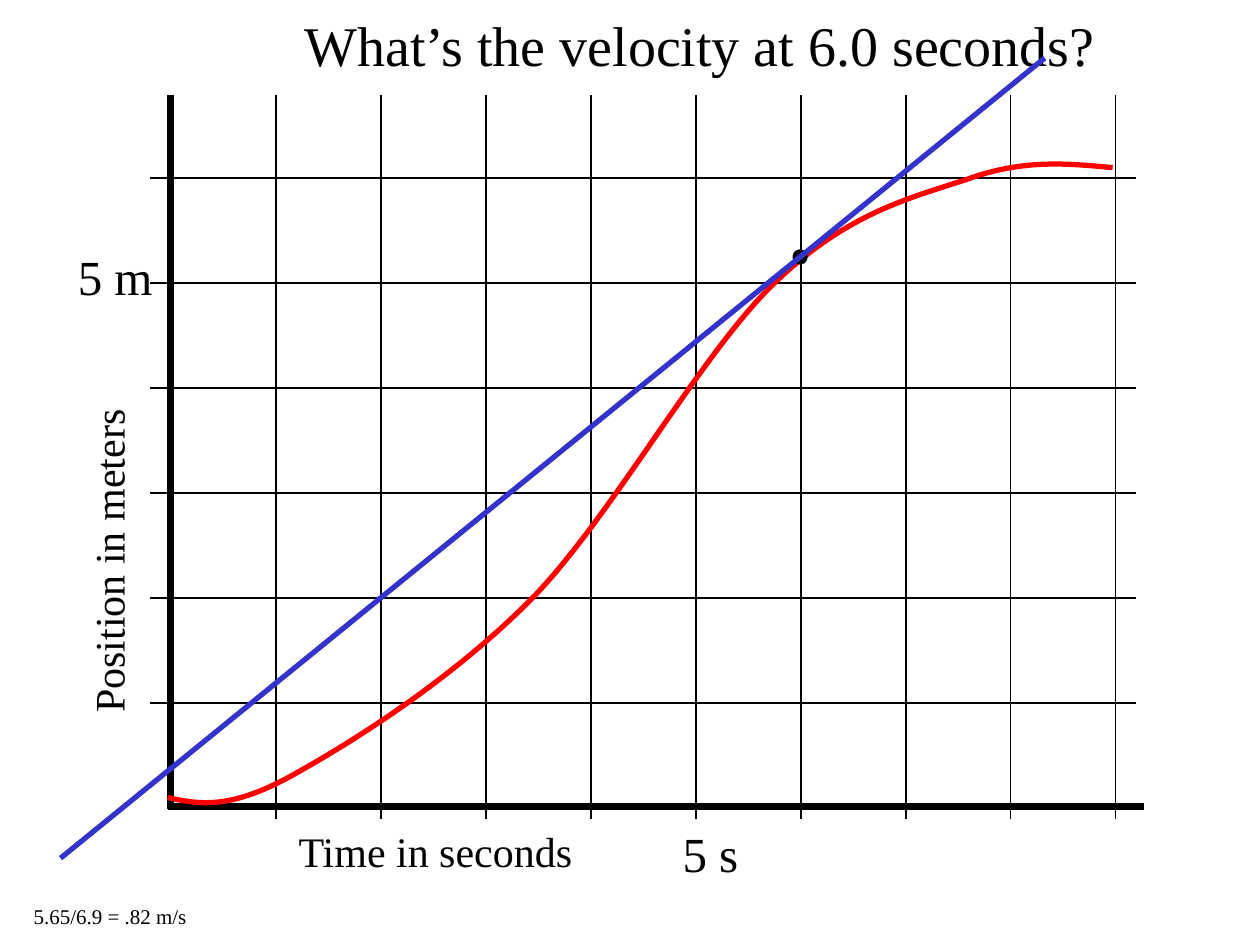
from pptx import Presentation
from pptx.dml.color import RGBColor as RGB
from pptx.enum.shapes import MSO_CONNECTOR as LINK, MSO_SHAPE as FORM
from pptx.enum.text import MSO_ANCHOR as ANCHOR, MSO_AUTO_SIZE as AUTO, PP_ALIGN as ALIGN
from pptx.oxml.ns import qn
from pptx.util import Cm, Pt
from lxml import etree


class Theme:
    font = "Times New Roman"
    ink = RGB(0x00, 0x00, 0x00)
    red = RGB(0xFF, 0x00, 0x00)
    blue = RGB(0x33, 0x33, 0xCC)
    title, mark, label, note = Pt(32), Pt(28), Pt(24), Pt(12)
    thick, curve, thin = Pt(4), Pt(3), Pt(1)


deck = Presentation()
deck.slide_width, deck.slide_height = Cm(25.4), Cm(19.05)
slide = deck.slides.add_slide(deck.slide_layouts[5])
shapes = slide.shapes


def rule(x1, y1, x2, y2, color, width):
    line = shapes.add_connector(LINK.STRAIGHT, Cm(x1), Cm(y1), Cm(x2), Cm(y2))
    line.line.color.rgb = color
    line.line.width = width
    etree.SubElement(line._element.spPr, qn("a:effectLst"))


def write(box, text, size):
    frame = box.text_frame
    frame.word_wrap = False
    frame.auto_size = AUTO.SHAPE_TO_FIT_TEXT
    frame.vertical_anchor = ANCHOR.TOP
    para = frame.paragraphs[0]
    para.alignment = ALIGN.LEFT
    run = para.add_run()
    run.text = text
    run.font.name = Theme.font
    run.font.size = size
    run.font.color.rgb = Theme.ink


# Title
title = shapes.title
title.left, title.top, title.width, title.height = Cm(5.89), Cm(0.08), Cm(16.51), Cm(1.6)
write(title, "What’s the velocity at 6.0 seconds?", Theme.title)

# Axes
rule(3.43, 1.91, 3.43, 16.31, Theme.ink, Theme.thick)
rule(3.38, 16.26, 23.06, 16.26, Theme.ink, Theme.thick)

# Grid: one line per second, one per meter
step = 16.93 / 8
for i in range(9):
    x = 5.56 + i * step
    rule(x, 16.51, x, 1.91, Theme.ink, Theme.thin)
for i in range(6):
    y = 14.17 - i * step
    rule(3.02, y, 22.91, y, Theme.ink, Theme.thin)

# Labels: text, size, left, top, width, height, turn
labels = [
    ("Position in meters", Theme.label, -1.14, 10.67, 6.63, 1.27, 270),
    ("Time in seconds", Theme.label, 5.77, 16.51, 6.05, 1.27, 0),
    ("5 s", Theme.mark, 13.51, 16.48, 1.63, 1.45, 0),
    ("5 m", Theme.mark, 1.32, 4.85, 2.03, 1.45, 0),
    ("5.65/6.9 = .82 m/s", Theme.note, 0.43, 18.08, 3.61, 0.76, 0),
]
for text, size, x, y, w, h, turn in labels:
    box = shapes.add_textbox(Cm(x), Cm(y), Cm(w), Cm(h))
    box.rotation = turn
    write(box, text, size)

# Position curve: a start, then two handles and an end for each bend
points = [
    (3.38, 16.08),
    (3.99, 16.21), (4.6, 16.33), (5.82, 15.67),
    (7.06, 14.99), (9.09, 13.72), (10.72, 12.07),
    (12.34, 10.41), (14.12, 7.14), (15.6, 5.72),
    (17.07, 4.29), (18.36, 3.99), (19.51, 3.61),
    (20.65, 3.2), (21.54, 3.3), (22.43, 3.38),
]
spots = [(Cm(x), Cm(y)) for x, y in points]
pen = shapes.build_freeform(*spots[0])
pen.add_line_segments(spots[1:], close=False)
curve = pen.convert_to_shape()
curve.shadow.inherit = False
curve.fill.background()
curve.line.color.rgb = Theme.red
curve.line.width = Theme.curve

# Turn each three straight segments into one Bézier bend
legs = list(curve._element.iter(qn("a:lnTo")))
for i in range(0, len(legs), 3):
    bend = etree.Element(qn("a:cubicBezTo"))
    legs[i].addprevious(bend)
    for leg in legs[i:i + 3]:
        bend.append(leg[0])
        leg.getparent().remove(leg)

# Point at 6 seconds and its tangent
dot = shapes.add_shape(FORM.OVAL, Cm(16.03), Cm(5.08), Cm(0.2), Cm(0.2))
dot.shadow.inherit = False
dot.fill.solid()
dot.fill.fore_color.rgb = Theme.ink
dot.line.color.rgb = Theme.ink
dot.line.width = Theme.curve
rule(1.22, 17.3, 21.06, 1.17, Theme.blue, Theme.curve)

deck.save("out.pptx")
